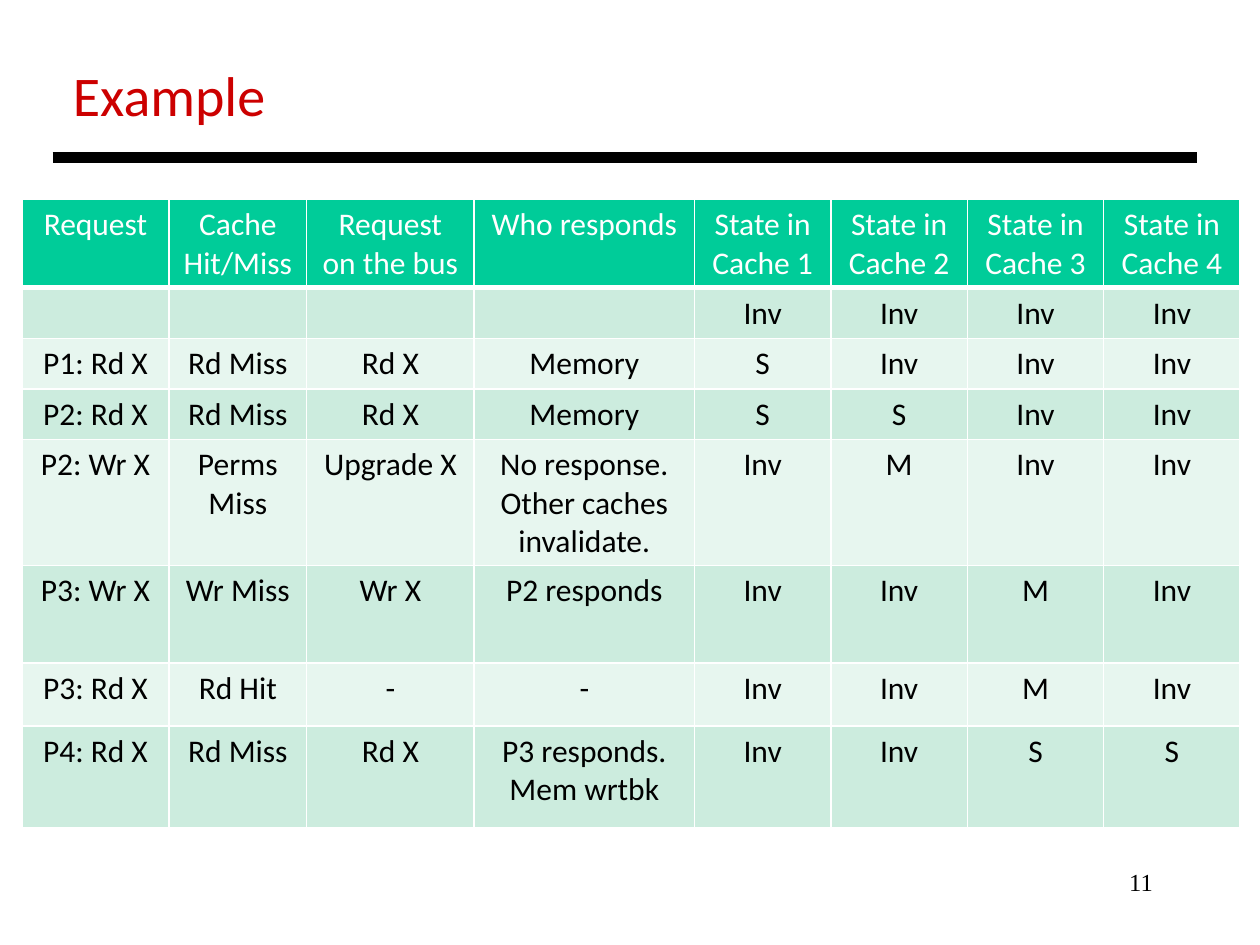
from lxml.etree import SubElement
from pptx import Presentation
from pptx.dml.color import RGBColor
from pptx.enum.shapes import MSO_CONNECTOR
from pptx.enum.text import MSO_AUTO_SIZE, PP_ALIGN
from pptx.oxml.ns import qn
from pptx.util import Cm, Pt

# Content
TITLE = "Example"
PAGE = "11"
HEADER = ["Request", "Cache\nHit/Miss", "Request\non the bus", "Who responds",
          *(f"State in Cache {number}" for number in range(1, 5))]
STEPS = [
    ("", "", "", "", "Inv", "Inv", "Inv", "Inv"),
    ("P1: Rd X", "Rd Miss", "Rd X", "Memory", "S", "Inv", "Inv", "Inv"),
    ("P2: Rd X", "Rd Miss", "Rd X", "Memory", "S", "S", "Inv", "Inv"),
    ("P2: Wr X", "Perms Miss", "Upgrade X",
     "No response.\nOther caches invalidate.", "Inv", "M", "Inv", "Inv"),
    ("P3: Wr X", "Wr Miss", "Wr X", "P2 responds", "Inv", "Inv", "M", "Inv"),
    ("P3: Rd X", "Rd Hit", "-", "-", "Inv", "Inv", "M", "Inv"),
    ("P4: Rd X", "Rd Miss", "Rd X", "P3 responds. Mem wrtbk",
     "Inv", "Inv", "S", "S"),
]

# Sizes in cm
COLUMN_WIDTHS = [2.97, 2.77, 3.38, 4.44] + [2.75] * 4
ROW_HEIGHTS = [1.78, 1.02, 1.02, 1.02, 2.54, 1.96, 1.27, 2.06]

THEME = {
    "font": "Calibri", "page_font": "Times New Roman",
    "title_size": 32, "cell_size": 18, "page_size": 14,
    "title": "CC0000", "text": "000000", "rule": "000000",
    "header_text": "FFFFFF", "header_fill": "00CC99",
    "bands": ("CCECDE", "E7F6EF"), "border": "FFFFFF",
}


def write(frame, text, *, size, color, font=THEME["font"], align=PP_ALIGN.LEFT):
    for index, line in enumerate(text.split("\n")):
        paragraph = frame.add_paragraph() if index else frame.paragraphs[0]
        paragraph.alignment = align
        paragraph.font.size = Pt(size)
        if line:
            run = paragraph.add_run()
            run.text = line
            run.font.size = Pt(size)
            run.font.name = font
            run.font.color.rgb = RGBColor.from_string(color)


def draw_borders(cell, bottom):
    properties = cell._tc.get_or_add_tcPr()
    for side, width in (("L", 1), ("R", 1), ("T", 1), ("B", bottom)):
        border = SubElement(properties, qn(f"a:ln{side}"), w=str(Pt(width)))
        fill = SubElement(border, qn("a:solidFill"))
        SubElement(fill, qn("a:srgbClr"), val=THEME["border"])


def add_states(slide):
    rows = [HEADER, *STEPS]
    states = slide.shapes.add_table(
        len(rows), len(HEADER), Cm(0.44), Cm(4.02),
        Cm(sum(COLUMN_WIDTHS)), Cm(sum(ROW_HEIGHTS))).table
    states.first_row = states.horz_banding = False
    for column, width in zip(states.columns, COLUMN_WIDTHS):
        column.width = Cm(width)
    for row, height in zip(states.rows, ROW_HEIGHTS):
        row.height = Cm(height)

    for r, entries in enumerate(rows):
        is_header = r == 0
        fill = THEME["header_fill"] if is_header else THEME["bands"][(r - 1) % 2]
        color = THEME["header_text"] if is_header else THEME["text"]
        for c, entry in enumerate(entries):
            cell = states.cell(r, c)
            draw_borders(cell, bottom=3 if is_header else 1)
            cell.fill.solid()
            cell.fill.fore_color.rgb = RGBColor.from_string(fill)
            write(cell.text_frame, entry, size=THEME["cell_size"],
                  color=color, align=PP_ALIGN.CENTER)


def main():
    deck = Presentation()
    deck.slide_width, deck.slide_height = Cm(25.4), Cm(19.05)
    slide = deck.slides.add_slide(deck.slide_layouts[6])

    # Page number
    page = slide.shapes.add_textbox(Cm(18.21), Cm(17.35), Cm(5.28), Cm(1.27))
    page.text_frame.word_wrap = True
    write(page.text_frame, PAGE, size=THEME["page_size"], color=THEME["text"],
          font=THEME["page_font"], align=PP_ALIGN.RIGHT)

    # Title and the rule below it
    title = slide.shapes.add_textbox(Cm(1.22), Cm(1.09), Cm(4.45), Cm(1.63))
    title.text_frame.word_wrap = False
    title.text_frame.auto_size = MSO_AUTO_SIZE.SHAPE_TO_FIT_TEXT
    write(title.text_frame, TITLE, size=THEME["title_size"], color=THEME["title"])
    rule = slide.shapes.add_connector(
        MSO_CONNECTOR.STRAIGHT, Cm(1.06), Cm(3.18), Cm(24.13), Cm(3.18))
    rule.line.color.rgb = RGBColor.from_string(THEME["rule"])
    rule.line.width = Pt(6)
    SubElement(rule._element.spPr, qn("a:effectLst"))

    # Cache states after each request
    add_states(slide)
    deck.save("out.pptx")


if __name__ == "__main__":
    main()
